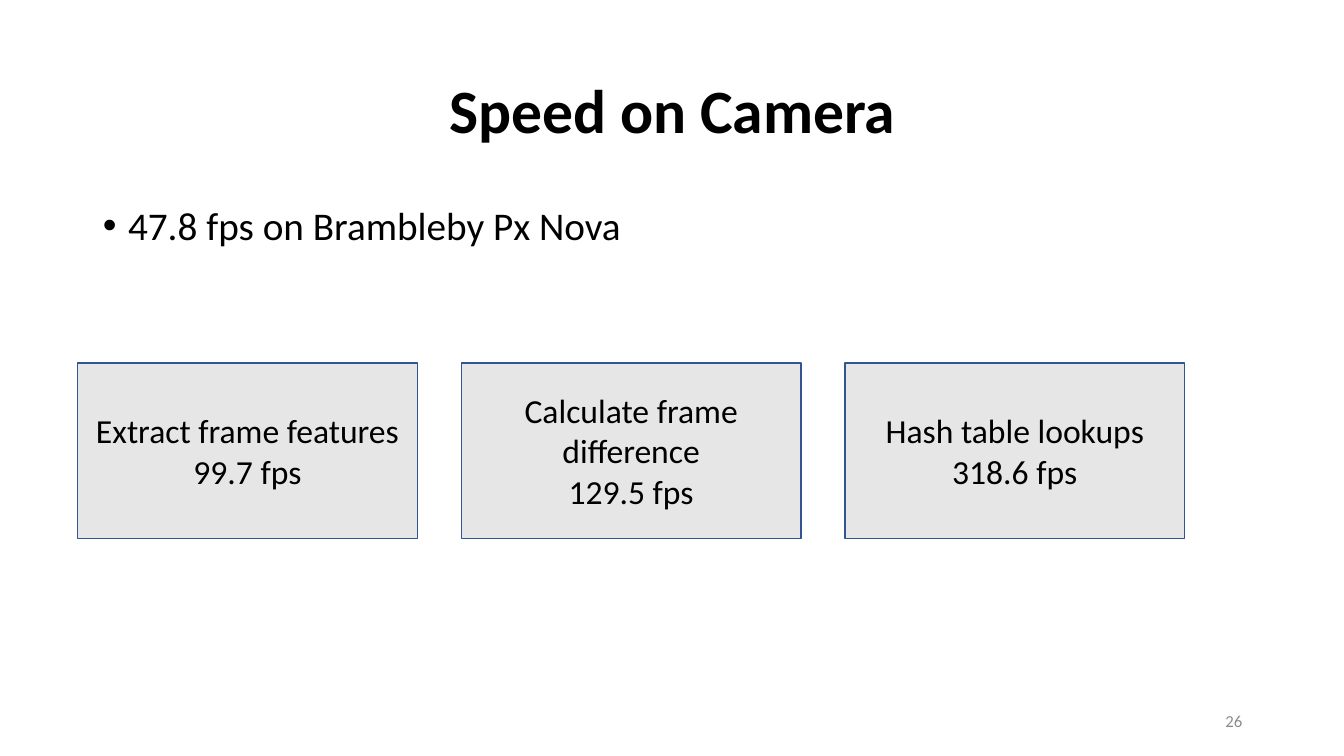
from lxml.etree import SubElement
from pptx import Presentation
from pptx.dml.color import RGBColor
from pptx.enum.shapes import MSO_SHAPE
from pptx.enum.text import MSO_ANCHOR, MSO_AUTO_SIZE, PP_ALIGN
from pptx.oxml.ns import qn
from pptx.util import Inches, Pt

COLOURS = {"text": "000000", "box": "E7E6E6", "edge": "325491", "number": "8C8C8C"}


def place(shape, left, top, width, height):
    shape.left, shape.top = Inches(left), Inches(top)
    shape.width, shape.height = Inches(width), Inches(height)


def add_text(para, text, size, colour="text", bold=False):
    span = para.add_run()
    span.text = text
    span.font.name = "Calibri"
    span.font.size = Pt(size)
    span.font.bold = bold
    span.font.color.rgb = RGBColor.from_string(COLOURS[colour])


deck = Presentation()
deck.slide_width, deck.slide_height = Inches(13.33), Inches(7.5)
page = deck.slides.add_slide(deck.slide_layouts[1])

# Title
title = page.shapes.title
place(title, 0.92, 0.4, 11.5, 1.45)
title.text_frame.vertical_anchor = MSO_ANCHOR.MIDDLE
para = title.text_frame.paragraphs[0]
para.alignment = PP_ALIGN.CENTER
para.line_spacing = 0.9
add_text(para, "Speed on Camera", 44, bold=True)

# Overall speed
body = page.placeholders[1]
place(body, 0.92, 2, 10.7, 0.58)
body.text_frame.auto_size = MSO_AUTO_SIZE.NONE
para = body.text_frame.paragraphs[0]
para.line_spacing = 0.9
para.space_before = Pt(0)
properties = para._p.get_or_add_pPr()
properties.set("marL", str(Inches(0.25)))
properties.set("indent", str(Inches(-0.25)))
SubElement(properties, qn("a:buFont"), typeface="Arial")
SubElement(properties, qn("a:buChar"), char="•")
add_text(para, "47.8 fps on Brambleby Px Nova", 28)

# Speed of each step, in three equal columns
STEPS = [
    ("Extract frame features", "99.7 fps"),
    ("Calculate frame difference", "129.5 fps"),
    ("Hash table lookups", "318.6 fps"),
]
LEFT, PITCH = 0.77, 3.805
for column, lines in enumerate(STEPS):
    box = page.shapes.add_shape(MSO_SHAPE.RECTANGLE, 0, 0, 0, 0)
    place(box, LEFT + column * PITCH, 3.6, 3.37, 1.74)
    box.shadow.inherit = False
    box.fill.solid()
    box.fill.fore_color.rgb = RGBColor.from_string(COLOURS["box"])
    box.line.color.rgb = RGBColor.from_string(COLOURS["edge"])
    box.line.width = Pt(1)
    frame = box.text_frame
    frame.word_wrap = True
    frame.vertical_anchor = MSO_ANCHOR.MIDDLE
    for row, line in enumerate(lines):
        para = frame.add_paragraph() if row else frame.paragraphs[0]
        para.alignment = PP_ALIGN.CENTER
        add_text(para, line, 24)

# Page number
number = page.shapes.add_textbox(0, 0, 0, 0)
place(number, 9.42, 6.95, 3, 0.4)
number.text_frame.word_wrap = True
number.text_frame.vertical_anchor = MSO_ANCHOR.MIDDLE
para = number.text_frame.paragraphs[0]
para.alignment = PP_ALIGN.RIGHT
add_text(para, "26", 12, "number")

deck.save("out.pptx")
